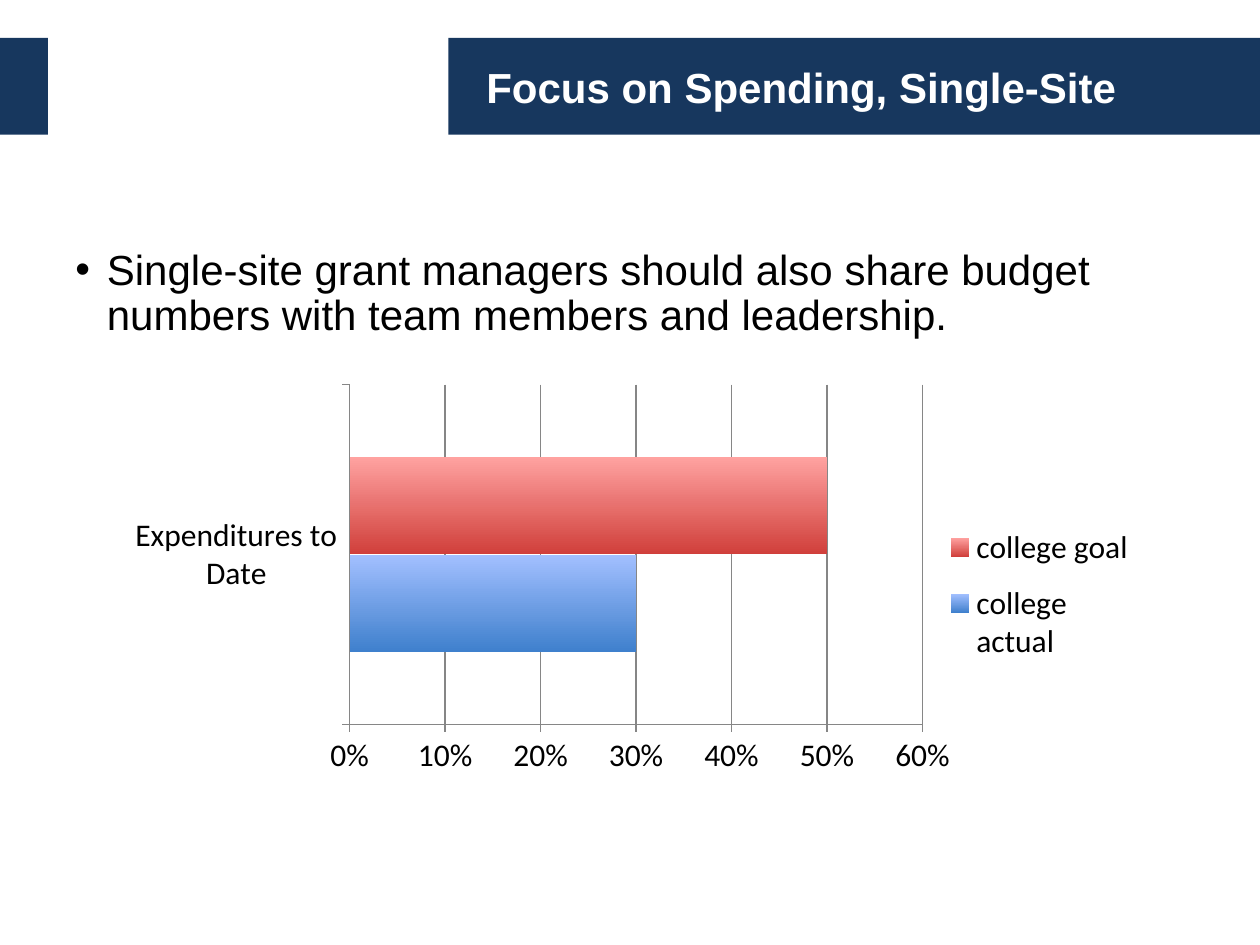
from lxml import etree
from pptx import Presentation
from pptx.chart import data
from pptx.dml import color
from pptx.enum import chart as ch, shapes, text
from pptx.oxml import ns
from pptx.util import Inches, Pt

NAVY, WHITE, BLACK, GRID = "17375E", "FFFFFF", "000000", "868686"
GRADIENTS = {"college actual": ("A3C0FF", "3F80CD"),
             "college goal": ("FFA2A0", "D03F3B")}


def rgb(value):
    return color.RGBColor.from_string(value)


def apply(target, **formats):
    for key, value in formats.items():
        setattr(target, key, value)


def place(shape, box):
    for side, value in zip(("left", "top", "width", "height"), box):
        setattr(shape, side, Inches(value))


def set_font(font, ink, **formats):
    apply(font, **formats)
    font.color.rgb = rgb(ink)


def add_band(slide, box):
    band = slide.shapes.add_shape(shapes.MSO_SHAPE.RECTANGLE, *map(Inches, box))
    band.shadow.inherit = False
    band.fill.solid()
    band.fill.fore_color.rgb = rgb(NAVY)
    band.line.fill.background()
    slide.shapes._spTree.insert(2, band._element)


def add_header(slide, box):
    left, top, width, height = box
    add_band(slide, (0, top, 0.38, height))
    add_band(slide, box)
    heading = slide.shapes.title
    place(heading, (left + 0.2, top, width - 0.38, height))
    frame = heading.text_frame
    frame.text = "Focus on Spending, Single-Site"
    apply(frame, vertical_anchor=text.MSO_ANCHOR.MIDDLE, word_wrap=True)
    line = frame.paragraphs[0]
    line.alignment = text.PP_ALIGN.LEFT
    set_font(line.runs[0].font, WHITE, name="Arial", size=Pt(24), bold=True)


def add_advice(slide, box):
    frame = slide.shapes.add_textbox(*map(Inches, box)).text_frame
    frame.word_wrap = True
    advice = frame.paragraphs[0]
    advice.text = ("Single-site grant managers should also share budget "
                   "numbers with team members and leadership.")
    apply(advice, line_spacing=0.9, space_after=Pt(3))
    properties = advice._p.get_or_add_pPr()
    properties.set("marL", str(Inches(0.25)))
    properties.set("indent", str(-Inches(0.25)))
    etree.SubElement(properties, ns.qn("a:buFont"), typeface="Arial")
    etree.SubElement(properties, ns.qn("a:buChar"), char="•")
    set_font(advice.runs[0].font, BLACK, name="Arial", size=Pt(24))


def set_layout(parent, after, inner=False, **fractions):
    for old in parent.findall(ns.qn("c:layout")):
        parent.remove(old)
    layout = etree.Element(ns.qn("c:layout"))
    manual = etree.SubElement(layout, ns.qn("c:manualLayout"))
    settings = {"layoutTarget": "inner"} if inner else {}
    settings.update(xMode="edge", yMode="edge", **fractions)
    for tag, value in settings.items():
        etree.SubElement(manual, ns.qn(f"c:{tag}"), val=str(value))
    if after is None:
        parent.insert(0, layout)
    else:
        parent.find(ns.qn(after)).addnext(layout)


def add_spending_chart(slide, box):
    spending = data.CategoryChartData(number_format="0%")
    spending.categories = ["Expenditures to Date"]
    spending.add_series("college actual", [0.3])
    spending.add_series("college goal", [0.5])
    chart = slide.shapes.add_chart(
        ch.XL_CHART_TYPE.BAR_CLUSTERED, *map(Inches, box), spending).chart
    apply(chart, has_title=False, has_legend=True)
    set_font(chart.font, BLACK, name="Calibri", size=Pt(18))

    plot = chart.plots[0]
    apply(plot, gap_width=150, vary_by_categories=False)
    for series in plot.series:
        series.invert_if_negative = False
        fill = series.format.fill
        fill.gradient()
        fill.gradient_angle = 270
        for stop, shade in zip(fill.gradient_stops, GRADIENTS[series.name]):
            stop.color.rgb = rgb(shade)

    percent = chart.value_axis
    apply(percent, minimum_scale=0, maximum_scale=0.6, major_unit=0.1,
          has_major_gridlines=True)
    apply(percent.tick_labels, number_format="0%", number_format_is_linked=False)
    for axis in (chart.category_axis, percent):
        axis.major_tick_mark = ch.XL_TICK_MARK.OUTSIDE
    for part in (chart.category_axis, percent, percent.major_gridlines):
        part.format.line.width = Pt(0.75)
        part.format.line.color.rgb = rgb(GRID)

    apply(chart.legend, position=ch.XL_LEGEND_POSITION.RIGHT, include_in_layout=False)
    set_layout(chart._chartSpace.chart.plotArea, None, inner=True,
               x=0.25, y=0.04, w=0.54, h=0.81)
    set_layout(chart.legend._element, "c:legendPos", x=0.81, y=0.34, w=0.18, h=0.4)


def main():
    deck = Presentation()
    apply(deck, slide_width=Inches(10), slide_height=Inches(7.5))
    slide = deck.slides.add_slide(deck.slide_layouts.get_by_name("Title Only"))
    add_header(slide, (3.56, 0.3, 6.44, 0.77))
    add_advice(slide, (0.5, 1.93, 8.58, 1.24))
    add_spending_chart(slide, (0.67, 2.92, 8.42, 3.33))
    deck.save("out.pptx")


if __name__ == "__main__":
    main()
